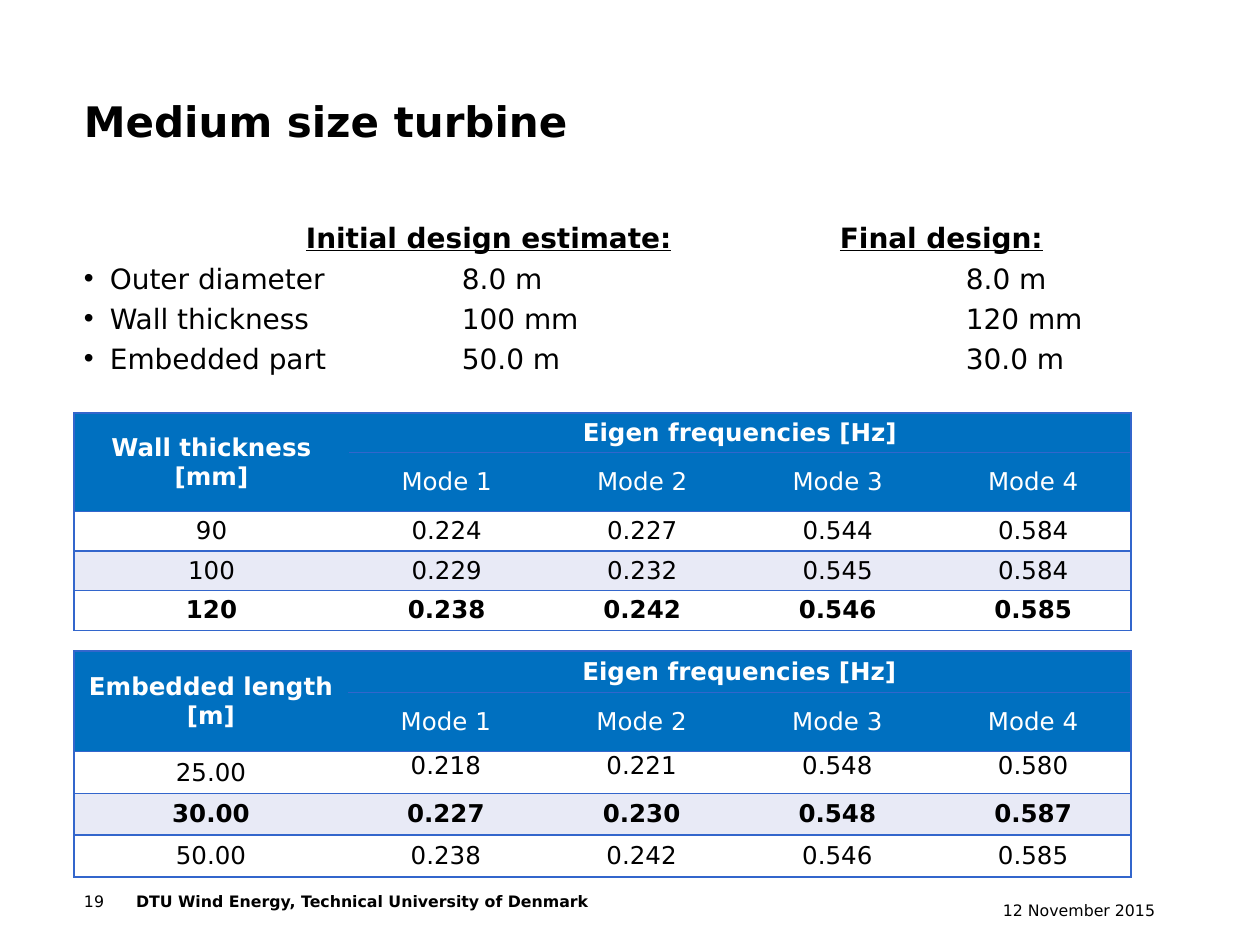
from lxml.etree import SubElement
from pptx import Presentation
from pptx.dml.color import RGBColor
from pptx.enum.text import MSO_ANCHOR, PP_ALIGN
from pptx.oxml.ns import qn
from pptx.util import Emu, Pt

BLACK = RGBColor(0x00, 0x00, 0x00)
WHITE = RGBColor(0xFF, 0xFF, 0xFF)
HEADER_BLUE = RGBColor(0x00, 0x70, 0xC0)
BAND = RGBColor(0xE8, 0xEA, 0xF6)
RULE_BLUE = RGBColor(0x33, 0x66, 0xCC)

PX = 914400 / 126
BULLET_INDENT = 26
MODES = ["Mode 1", "Mode 2", "Mode 3", "Mode 4"]


def px(length):
    return Emu(round(length * PX))


def apply(target, values):
    for name, value in values.items():
        setattr(target, name, value)


class SlideBuilder:
    font_name = "DejaVu Sans"

    def __init__(self, slide):
        self.slide = slide

    def run(self, paragraph, text, size, color=BLACK, **style):
        run = paragraph.add_run()
        run.text = text
        apply(run.font, {"name": self.font_name, "size": Pt(size), **style})
        run.font.color.rgb = color

    def frame(self, left, top, width, height, anchor=MSO_ANCHOR.TOP):
        box = self.slide.shapes.add_textbox(px(left), px(top), px(width), px(height))
        apply(box.text_frame, {
            "margin_left": 0, "margin_top": 0, "margin_right": 0, "margin_bottom": 0,
            "word_wrap": True, "vertical_anchor": anchor,
        })
        return box.text_frame

    def label(self, text, area, size, align=PP_ALIGN.LEFT, anchor=MSO_ANCHOR.TOP, **style):
        paragraph = self.frame(*area, anchor).paragraphs[0]
        paragraph.alignment = align
        self.run(paragraph, text, size, **style)

    def tabs(self, paragraph, stops, bullet=False):
        properties = paragraph._p.get_or_add_pPr()
        if bullet:
            properties.set("marL", str(px(BULLET_INDENT)))
            properties.set("indent", str(px(-BULLET_INDENT)))
            SubElement(properties, qn("a:buFont"), typeface="Arial")
            SubElement(properties, qn("a:buChar"), char="•")
        tab_list = SubElement(properties, qn("a:tabLst"))
        for stop in stops:
            SubElement(tab_list, qn("a:tab"), pos=str(px(stop)), algn="l")

    def comparison(self, area, headings, items):
        frame = self.frame(*area)
        heading = frame.paragraphs[0]
        self.tabs(heading, [222, 756])
        for text in headings:
            self.run(heading, "\t", 16)
            self.run(heading, text, 16, bold=True, underline=True)
        for item in items:
            paragraph = frame.add_paragraph()
            self.tabs(paragraph, [378, 882], bullet=True)
            paragraph.space_before = Pt(3.7)
            self.run(paragraph, "\t".join(item), 16)

    def borders(self, cell, edges):
        properties = cell._tc.get_or_add_tcPr()
        for edge in "LRTB":
            line = SubElement(properties, qn(f"a:ln{edge}"), w=str(Pt(1)))
            if edge in edges:
                fill = SubElement(line, qn("a:solidFill"))
                SubElement(fill, qn("a:srgbClr"), val=str(RULE_BLUE))
            else:
                SubElement(line, qn("a:noFill"))

    def frequency_table(self, area, first_width, parameter, results, chosen, top_row=None):
        left, top, width, height = area
        rows = [[parameter, "Eigen frequencies [Hz]", "", "", ""], ["", *MODES], *results]
        table = self.slide.shapes.add_table(
            len(rows), 5, px(left), px(top), px(width), px(height)).table
        apply(table, {"first_row": False, "horz_banding": False})
        for index, column in enumerate(table.columns):
            column.width = px((width - first_width) / 4 if index else first_width)
        for row in table.rows:
            row.height = px(height / len(rows))
        table.cell(0, 0).merge(table.cell(1, 0))
        table.cell(0, 1).merge(table.cell(0, 4))

        for r, row in enumerate(rows):
            header = r < 2
            background = HEADER_BLUE if header else BAND if r == 3 else WHITE
            for c, text in enumerate(row):
                cell = table.cell(r, c)
                at_top = r == top_row and c > 0
                apply(cell, {
                    "margin_left": px(9), "margin_right": px(9),
                    "margin_top": 0, "margin_bottom": 0,
                    "vertical_anchor": MSO_ANCHOR.TOP if at_top else MSO_ANCHOR.MIDDLE,
                })
                edges = "B" if (r, c) == (1, 0) else "TB"
                edges += "L" if c == 0 else ""
                edges += "R" if c == 4 or (r, c) == (0, 1) else ""
                self.borders(cell, edges)
                cell.fill.solid()
                cell.fill.fore_color.rgb = background
                if text:
                    paragraph = cell.text_frame.paragraphs[0]
                    paragraph.alignment = PP_ALIGN.CENTER
                    self.run(paragraph, text, 14, WHITE if header else BLACK,
                             bold=r in (0, chosen))


def main():
    presentation = Presentation()
    apply(presentation, {"slide_width": px(1260), "slide_height": px(945)})
    builder = SlideBuilder(presentation.slides.add_slide(presentation.slide_layouts[6]))

    builder.label("DTU Wind Energy, Technical University of Denmark",
                  (136, 892, 583, 42), 9, bold=True)
    builder.label("Medium size turbine", (84, 42, 1071, 158), 24,
                  anchor=MSO_ANCHOR.MIDDLE, bold=True)
    builder.comparison(
        (84, 221, 1071, 629),
        ["Initial design estimate:", "Final design:"],
        [
            ("Outer diameter", "8.0 m", "8.0 m"),
            ("Wall thickness", "100 mm", "120 mm"),
            ("Embedded part", "50.0 m", "30.0 m"),
        ],
    )
    builder.label("19", (84, 892, 42, 42), 9)
    builder.label("12 November 2015", (978, 901, 177, 33), 9, align=PP_ALIGN.RIGHT)

    builder.frequency_table(
        (74, 413, 1057, 198), 275, "Wall thickness [mm]",
        [
            ["90", "0.224", "0.227", "0.544", "0.584"],
            ["100", "0.229", "0.232", "0.545", "0.584"],
            ["120", "0.238", "0.242", "0.546", "0.585"],
        ],
        chosen=4,
    )
    builder.frequency_table(
        (74, 651, 1057, 209), 274, "Embedded length [m]",
        [
            ["25.00", "0.218", "0.221", "0.548", "0.580"],
            ["30.00", "0.227", "0.230", "0.548", "0.587"],
            ["50.00", "0.238", "0.242", "0.546", "0.585"],
        ],
        chosen=3, top_row=2,
    )
    presentation.save("out.pptx")


if __name__ == "__main__":
    main()
